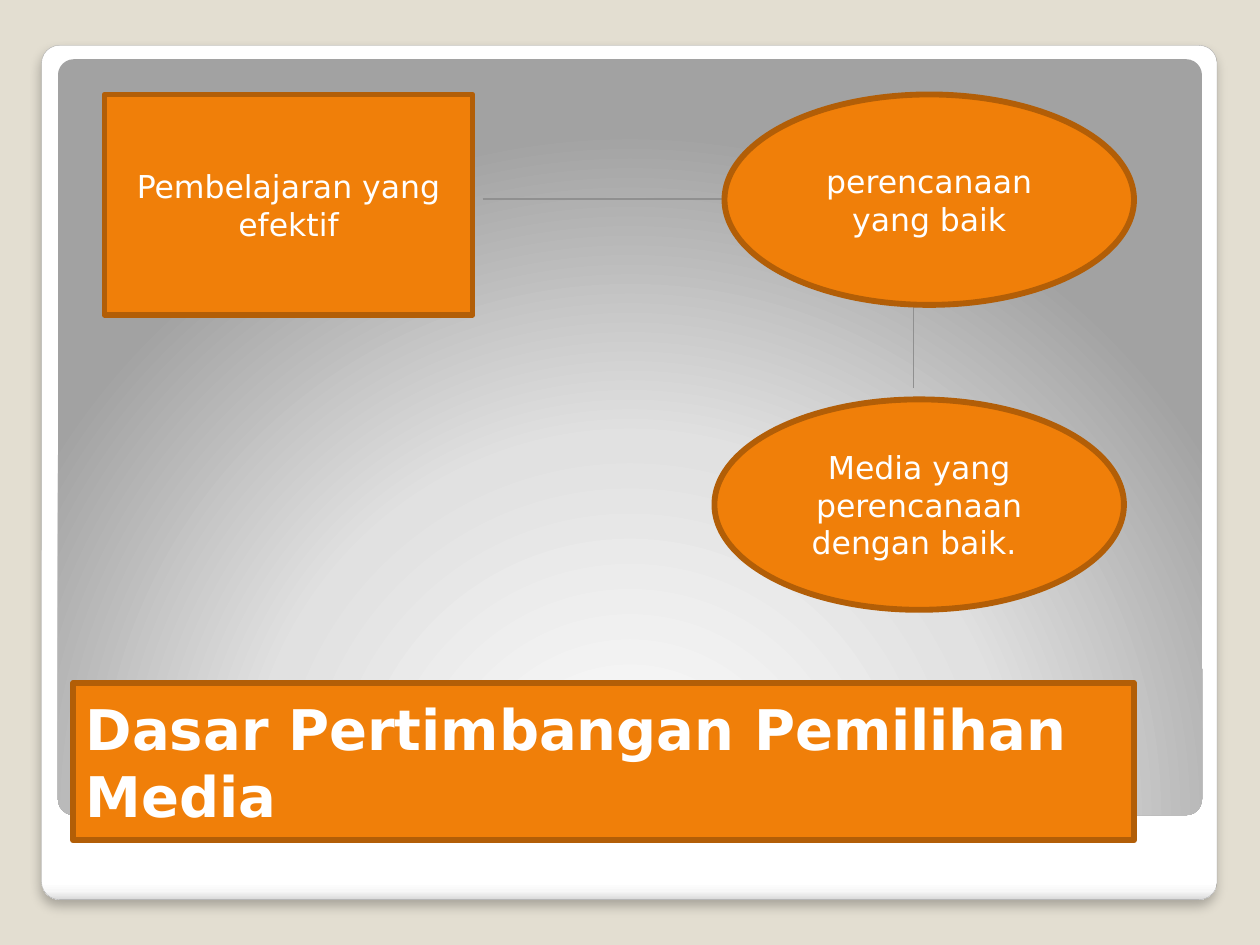
from lxml import etree
from pptx import Presentation
from pptx import util as u
from pptx.dml.color import RGBColor
from pptx.enum import shapes, text
from pptx.oxml import parse_xml
from pptx.oxml.ns import nsdecls, qn

COLORS = {"background": "E3DED1", "card": "F07F09", "border": "B25E07",
          "text": "FFFFFF", "link": "909090", "frame_edge": "A4A4A4"}
FONT = "DejaVu Sans"
KIND = shapes.MSO_SHAPE

# Content: positions are left, top, width, height in inches
TITLE = ("Dasar Pertimbangan Pemilihan Media", (0.58, 5.42, 8.42, 1.25))
OVAL = (3.25, 1.67)
CARDS = [
    (KIND.RECTANGLE, "Pembelajaran yang efektif", (0.83, 0.75, 2.92, 1.75)),
    (KIND.OVAL, "perencanaan yang baik", (5.75, 0.75, *OVAL)),
    (KIND.OVAL, "Media yang perencanaan dengan baik. ", (5.67, 3.17, *OVAL)),
]
LINKS = [(7.25, 2.25, 7.25, 3.08), (3.83, 1.58, 5.75, 1.58)]

# Backdrop: position, gradient stops (percent, colour), gradient direction
FRAME = ((0.33, 0.36, 9.33, 6.78),
         [(0, "FFFFFF"), (98, "FFFFFF"), (99, "F7F7F7"), (100, "DADADA")],
         '<a:lin ang="5400000" scaled="0"/>')
PANEL = ((0.46, 0.47, 9.08, 6),
         [(0, "FFFFFF"), (55, "E1E1E1"), (100, "A2A2A2")],
         '<a:path path="circle"><a:fillToRect l="50000" t="175000" '
         'r="50000" b="-75000"/></a:path>')


def rgb(name):
    return RGBColor.from_string(COLORS[name])


def inches(lengths):
    return [u.Inches(length) for length in lengths]


def write(shape, words, size=18, bold=False, align=text.PP_ALIGN.CENTER):
    frame = shape.text_frame
    frame.word_wrap = True
    frame.auto_size = text.MSO_AUTO_SIZE.NONE
    frame.vertical_anchor = text.MSO_ANCHOR.MIDDLE
    paragraph = frame.paragraphs[0]
    paragraph.alignment = align
    run = paragraph.add_run()
    run.text = words
    run.font.name, run.font.size, run.font.bold = FONT, u.Pt(size), bold
    run.font.color.rgb = rgb("text")


def paint(shape):
    shape.fill.solid()
    shape.fill.fore_color.rgb = rgb("card")
    shape.line.color.rgb = rgb("border")
    shape.line.width = u.Pt(3.35)


def add_backdrop(slide, box, stops, direction):
    backdrop = slide.shapes.add_shape(KIND.ROUNDED_RECTANGLE, *inches(box))
    backdrop.adjustments[0] = 0.021
    backdrop.shadow.inherit = False
    backdrop.line.fill.background()
    marks = "".join(f'<a:gs pos="{percent * 1000}"><a:srgbClr val="{color}"/></a:gs>'
                    for percent, color in stops)
    gradient = parse_xml(f'<a:gradFill {nsdecls("a")} rotWithShape="1">'
                         f'<a:gsLst>{marks}</a:gsLst>{direction}</a:gradFill>')
    backdrop.element.spPr.find(qn("a:prstGeom")).addnext(gradient)
    return backdrop


prs = Presentation()
prs.slide_width, prs.slide_height = inches((10, 7.5))
slide = prs.slides.add_slide(prs.slide_layouts[5])
slide.background.fill.solid()
slide.background.fill.fore_color.rgb = rgb("background")

# White frame with a soft shadow, and the grey panel in it
frame = add_backdrop(slide, *FRAME)
frame.line.color.rgb = rgb("frame_edge")
frame.line.width = u.Pt(0.16)
frame.element.spPr.find(qn("a:effectLst")).append(parse_xml(
    f'<a:outerShdw {nsdecls("a")} blurRad="{u.Pt(6)}" dist="{u.Pt(4)}" dir="5400000" '
    'algn="tl" rotWithShape="0"><a:srgbClr val="000000"><a:alpha val="25000"/>'
    '</a:srgbClr></a:outerShdw>'))
add_backdrop(slide, *PANEL)

# Title bar, raised above the backdrop
title = slide.shapes.title
title_words, title_box = TITLE
title.left, title.top, title.width, title.height = inches(title_box)
paint(title)
write(title, title_words, size=32, bold=True, align=text.PP_ALIGN.LEFT)
panel_end = slide.shapes[-1].element
panel_end.addnext(title.element)

# Links lie under the cards
for ends in LINKS:
    link = slide.shapes.add_connector(shapes.MSO_CONNECTOR.STRAIGHT, *inches(ends))
    link.line.color.rgb = rgb("link")
    link.line.width = u.Pt(0.75)
    etree.SubElement(link.element.spPr, qn("a:effectLst"))

for kind, words, box in CARDS:
    card = slide.shapes.add_shape(kind, *inches(box))
    card.shadow.inherit = False
    paint(card)
    write(card, words)

prs.save("out.pptx")
